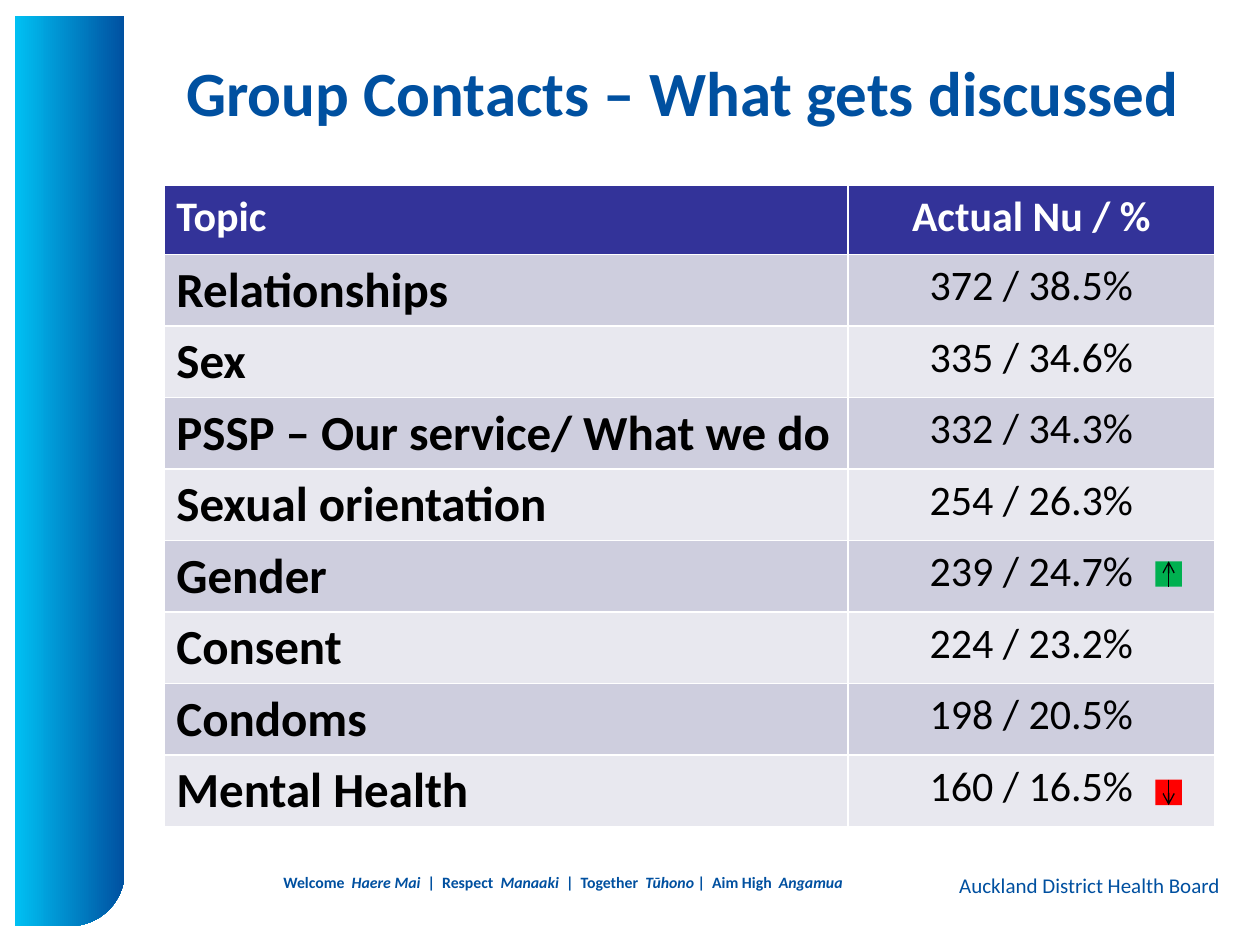
from lxml.etree import SubElement
from pptx import Presentation
from pptx.dml.color import RGBColor
from pptx.enum.shapes import MSO_CONNECTOR, MSO_SHAPE
from pptx.enum.text import MSO_ANCHOR, PP_ALIGN
from pptx.oxml.ns import qn
from pptx.util import Inches, Pt

COLORS = {name: RGBColor.from_string(value) for name, value in {
    "blue": "0050A0", "cyan": "00C0F3", "header": "333399", "odd": "CECEDE",
    "even": "E8E8EF", "white": "FFFFFF", "black": "000000",
    "up": "00B050", "down": "FF0000"}.items()}

prs = Presentation()
prs.slide_width, prs.slide_height = Inches(10), Inches(7.5)
COL, ROW = prs.slide_width / 100, prs.slide_height / 100
s = prs.slides.add_slide(prs.slide_layouts[6])


def box(left, top, width, height):
    return int(left * COL), int(top * ROW), int(width * COL), int(height * ROW)


def style(p, size, color, bold=False, align=PP_ALIGN.LEFT):
    p.alignment = align
    p.font.name, p.font.size, p.font.bold = "Calibri", Pt(size), bold
    p.font.color.rgb = COLORS[color]


sp = s.shapes.add_shape(MSO_SHAPE.ROUND_1_RECTANGLE, *box(1.2, 1.7, 8.7, 96.3))
sp.shadow.inherit = False
sp.adjustments[0] = 0.5
sp.line.fill.background()
sp.fill.gradient()
sp.fill.gradient_angle = 0
for stop, color in zip(sp.fill.gradient_stops, ("cyan", "blue")):
    stop.color.rgb = COLORS[color]
sp._element.spPr.find(qn("a:xfrm")).set("flipV", "1")

title = [("Group Contacts – What gets discussed", False)]
board = [("Auckland District Health Board", False)]
values = [("Welcome  ", False), ("Haere Mai", True), ("  |  Respect  ", False),
          ("Manaaki  ", True), ("|  Together  ", False), ("Tūhono", True),
          (" |  Aim High  ", False), ("Angamua", True)]
for place, runs, size, bold, align, anchor in (
        (box(47.4, 91.7, 50.4, 4), board, 12, False, PP_ALIGN.RIGHT, MSO_ANCHOR.TOP),
        (box(21.5, 91.7, 47.5, 3.3), values, 9, True, PP_ALIGN.LEFT, MSO_ANCHOR.TOP),
        (box(13.8, 3.9, 82.7, 11.6), title, 36, True, PP_ALIGN.LEFT, MSO_ANCHOR.MIDDLE)):
    tf = s.shapes.add_textbox(*place).text_frame
    tf.word_wrap = True
    tf.vertical_anchor = anchor
    p = tf.paragraphs[0]
    style(p, size, "blue", bold, align)
    for text, italic in runs:
        r = p.add_run()
        r.text = text
        if italic:
            r.font.italic = True

rows = [("Topic", "Actual Nu / %"),
        ("Relationships", "372 / 38.5%"),
        ("Sex", "335 / 34.6%"),
        ("PSSP – Our service/ What we do", "332 / 34.3%"),
        ("Sexual orientation", "254 / 26.3%"),
        ("Gender", "239 / 24.7%"),
        ("Consent", "224 / 23.2%"),
        ("Condoms", "198 / 20.5%"),
        ("Mental Health", "160 / 16.5%")]
table = s.shapes.add_table(len(rows), 2, *box(13, 19.6, 83.4, 66)).table
for column, share in zip(table.columns, (54.3, 29.1)):
    column.width = int(share * COL)
for i, row in enumerate(rows):
    table.rows[i].height = int(7.33 * ROW)
    for j, text in enumerate(row):
        cell = table.cell(i, j)
        cell.text = text
        cell.fill.solid()
        cell.fill.fore_color.rgb = COLORS["header" if i == 0 else "odd" if i % 2 else "even"]
        style(cell.text_frame.paragraphs[0], 28 if i and j == 0 else 24,
              "black" if i else "white", i == 0 or j == 0,
              PP_ALIGN.CENTER if j else PP_ALIGN.LEFT)

for trend, top, begin, end in (("down", 82.5, 0, 2), ("up", 59.4, 2, 0)):
    sp = s.shapes.add_shape(MSO_SHAPE.RECTANGLE, *box(91.7, top, 2.1, 2.7))
    sp.shadow.inherit = False
    sp.fill.solid()
    sp.fill.fore_color.rgb = COLORS[trend]
    sp.line.fill.background()
    arrow = s.shapes.add_connector(MSO_CONNECTOR.STRAIGHT, 0, 0, 0, 0)
    arrow.begin_connect(sp, begin)
    arrow.end_connect(sp, end)
    arrow.line.color.rgb = COLORS["black"]
    arrow.line.width = Pt(0.75)
    SubElement(arrow._element.spPr.find(qn("a:ln")), qn("a:tailEnd"), type="arrow")
    SubElement(arrow._element.spPr, qn("a:effectLst"))

prs.save("out.pptx")
